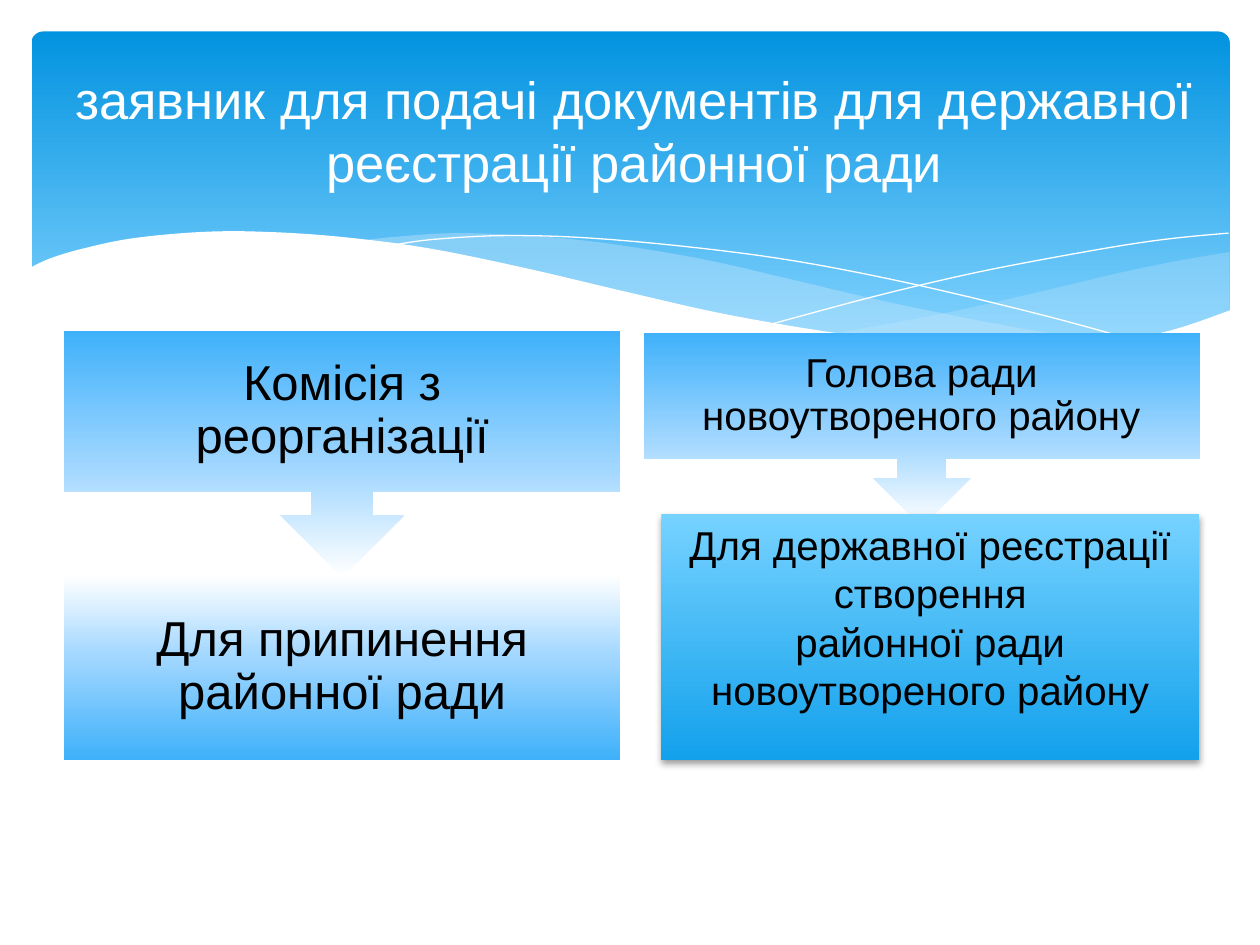
from copy import deepcopy

from lxml import etree
from pptx import Presentation
from pptx.dml.color import RGBColor
from pptx.enum import shapes, text
from pptx.oxml.ns import qn
from pptx.util import Inches, Pt

WHITE = RGBColor(0xFF, 0xFF, 0xFF)
BLACK = RGBColor(0, 0, 0)
MIST = RGBColor(0xC6, 0xE7, 0xFC)
SKY = RGBColor(0x81, 0xD2, 0xFE)
HEADER_FILL = [(0, RGBColor(0x02, 0x93, 0xE0)), (0.9, SKY), (1, SKY)]
STEP_FILL = [(0, WHITE), (0.44, RGBColor(0xA2, 0xD7, 0xFF)),
             (1, RGBColor(0x3F, 0xB1, 0xFA))]
RESULT_FILL = [(0, RGBColor(0x76, 0xD2, 0xFF)), (1, RGBColor(0x13, 0xA1, 0xEC))]
FONT = "Arial"

# Wave outlines in inches
RIGHT_WAVE_TOP = [(9.76, 2), (9.35, 2.07), (8.91, 2.16), (8.32, 2.3),
                  (7.53, 2.48), (6.61, 2.65)]
RIGHT_WAVE_BASE = [(6.61, 2.65), (7.19, 2.72), (7.69, 2.77), (8.14, 2.78),
                   (8.63, 2.75), (9.05, 2.69), (9.42, 2.59), (9.76, 2.47)]
MIDDLE_WAVE_TOP = [(8.93, 2.73), (8.07, 2.6), (7.06, 2.4), (6.29, 2.22),
                   (5.69, 2.08), (5.14, 1.98), (4.65, 1.91), (4.2, 1.87),
                   (3.61, 1.85), (3.13, 1.88), (2.86, 1.91)]
MIDDLE_WAVE_BASE = [(2.86, 1.91), (3.42, 1.99), (4.04, 2.11), (4.91, 2.32),
                    (5.66, 2.48), (6.34, 2.61), (6.95, 2.7), (7.48, 2.76),
                    (8.07, 2.78), (8.57, 2.77), (8.93, 2.73)]
FALLING_LINE = [(3.09, 1.95), (3.44, 1.9), (4.01, 1.87), (4.69, 1.89),
                (5.56, 1.97), (6.36, 2.08), (7.27, 2.26), (8.31, 2.51),
                (9.07, 2.72)]
RISING_LINE = [(6.13, 2.57), (6.95, 2.35), (7.76, 2.16), (8.66, 1.99),
               (9.24, 1.9), (9.75, 1.85)]
PAGE_EDGE = [(9.77, 2.46), (9.3, 2.62), (8.75, 2.73), (8.09, 2.77),
             (7.44, 2.74), (6.68, 2.65), (5.79, 2.5), (5.03, 2.33),
             (4.18, 2.13), (3.4, 1.97), (2.71, 1.88), (2.11, 1.84),
             (1.61, 1.84), (1.06, 1.89), (0.67, 1.97), (0.4, 2.05),
             (0.23, 2.13)]


def smooth(points, steps=5):
    """Catmull-Rom curve through the points."""
    padded = [points[0], *points, points[-1]]
    curve = [points[0]]
    for a, b, c, d in zip(padded, padded[1:], padded[2:], padded[3:]):
        for step in range(1, steps + 1):
            t = step / steps
            curve.append(tuple(
                0.5 * (2 * q + (r - p) * t + (2 * p - 5 * q + 4 * r - s) * t ** 2
                       + (3 * q - p - 3 * r + s) * t ** 3)
                for p, q, r, s in zip(a, b, c, d)))
    return curve


def fill_gradient(shape, stops):
    """Top-to-bottom gradient without outline."""
    shape.shadow.inherit = False
    shape.line.fill.background()
    shape.fill.gradient()
    shape.fill.gradient_angle = 270
    stop_list = shape._element.spPr.find(".//" + qn("a:gsLst"))
    while len(stop_list) < len(stops):
        stop_list.append(deepcopy(stop_list[-1]))
    for stop, (position, color) in zip(shape.fill.gradient_stops, stops):
        stop.position = position
        stop.color.rgb = color


def write(frame, paragraphs, size, color, inset=None, spacing=None):
    frame.word_wrap = True
    if inset is not None:
        frame.margin_left = frame.margin_right = Inches(inset)
        frame.margin_top = frame.margin_bottom = Inches(inset)
    frame.text = "\n".join(paragraphs)
    for paragraph in frame.paragraphs:
        paragraph.alignment = text.PP_ALIGN.CENTER
        paragraph.line_spacing = spacing
        paragraph.font.name = FONT
        paragraph.font.size = Pt(size)
        paragraph.font.color.rgb = color


def add_wave(slide, points, fill=None, alpha=100):
    """Filled wave, or a thin white line when no fill is given."""
    corners = [(Inches(x), Inches(y)) for x, y in points]
    builder = slide.shapes.build_freeform(*corners[0])
    builder.add_line_segments(corners[1:], close=fill is not None)
    wave = builder.convert_to_shape()
    wave.shadow.inherit = False
    if fill is None:
        wave.fill.background()
        wave.line.color.rgb = WHITE
        wave.line.width = Pt(0.75)
        return
    wave.line.fill.background()
    wave.fill.solid()
    wave.fill.fore_color.rgb = fill
    if alpha < 100:
        color = wave._element.spPr.find(qn("a:solidFill"))[0]
        etree.SubElement(color, qn("a:alpha"), val=str(alpha * 1000))


def add_header(slide, left, top, width, height):
    # Blue panel
    panel = slide.shapes.add_shape(
        shapes.MSO_SHAPE.ROUNDED_RECTANGLE,
        Inches(left), Inches(top), Inches(width), Inches(height))
    panel.adjustments[0] = 0.034
    fill_gradient(panel, HEADER_FILL)
    # Waves, with the white page edge in front
    add_wave(slide, smooth(RIGHT_WAVE_TOP) + smooth(RIGHT_WAVE_BASE), MIST, 29)
    add_wave(slide, smooth(MIDDLE_WAVE_TOP) + smooth(MIDDLE_WAVE_BASE), MIST, 40)
    add_wave(slide, smooth(FALLING_LINE))
    add_wave(slide, smooth(RISING_LINE))
    add_wave(slide, smooth(PAGE_EDGE) + [(0.23, 3.29), (9.77, 3.29)], WHITE)
    # Title, brought in front of the panel
    title = slide.shapes.title
    slide.shapes._spTree.append(title._element)
    title.left, title.top = Inches(left + 0.17), Inches(top + 0.11)
    title.width, title.height = Inches(9.23), Inches(1.34)
    title.text_frame.vertical_anchor = text.MSO_ANCHOR.MIDDLE
    write(title.text_frame,
          ["заявник для подачі документів для державної реєстрації районної ради"],
          30, WHITE)


def add_applicant(slide, left, top, width, height, label, size, inset):
    """Callout pointing down, with its label in the upper 65 %."""
    callout = slide.shapes.add_shape(
        shapes.MSO_SHAPE.UP_ARROW_CALLOUT,
        Inches(left), Inches(top), Inches(width), Inches(height))
    callout.rotation = 180
    for index, value in enumerate((0.25, 0.25, 0.25, 0.65)):
        callout.adjustments[index] = value
    fill_gradient(callout, STEP_FILL)
    caption = slide.shapes.add_textbox(
        Inches(left), Inches(top), Inches(width), Inches(height * 0.65))
    caption.text_frame.vertical_anchor = text.MSO_ANCHOR.MIDDLE
    write(caption.text_frame, [label], size, BLACK, inset, 0.9)


def add_purpose(slide, left, top, width, height, stops, anchor, paragraphs, size,
                inset=None, spacing=None):
    purpose = slide.shapes.add_shape(
        shapes.MSO_SHAPE.RECTANGLE,
        Inches(left), Inches(top), Inches(width), Inches(height))
    fill_gradient(purpose, stops)
    purpose.text_frame.vertical_anchor = anchor
    write(purpose.text_frame, paragraphs, size, BLACK, inset, spacing)
    return purpose


def add_soft_shadow(shape):
    effects = shape._element.spPr.find(qn("a:effectLst"))
    shadow = etree.SubElement(
        effects, qn("a:outerShdw"), blurRad=str(Pt(4)), dist=str(Pt(2)),
        dir="5400000", rotWithShape="0")
    color = etree.SubElement(shadow, qn("a:srgbClr"), val=str(BLACK))
    etree.SubElement(color, qn("a:alpha"), val="38000")


def main():
    deck = Presentation()
    deck.slide_width, deck.slide_height = Inches(10), Inches(7.5)
    slide = deck.slides.add_slide(deck.slide_layouts[5])
    add_header(slide, 0.25, 0.25, 9.51, 2.7)

    # Left column: termination
    add_purpose(slide, 0.51, 4.56, 4.41, 1.47, STEP_FILL, text.MSO_ANCHOR.MIDDLE,
                ["Для припинення районної ради"], 28, 0.22, 0.9)
    add_applicant(slide, 0.51, 2.63, 4.41, 1.95, "Комісія з реорганізації", 28, 0.22)

    # Right column: creation
    add_applicant(slide, 5.11, 2.64, 4.41, 1.54,
                  "Голова ради новоутвореного району", 23, 0.16)
    creation = add_purpose(
        slide, 5.25, 4.08, 4.27, 1.95, RESULT_FILL, text.MSO_ANCHOR.TOP,
        ["Для державної реєстрації створення",
         "районної ради новоутвореного району"], 23)
    add_soft_shadow(creation)
    deck.save("out.pptx")


if __name__ == "__main__":
    main()
